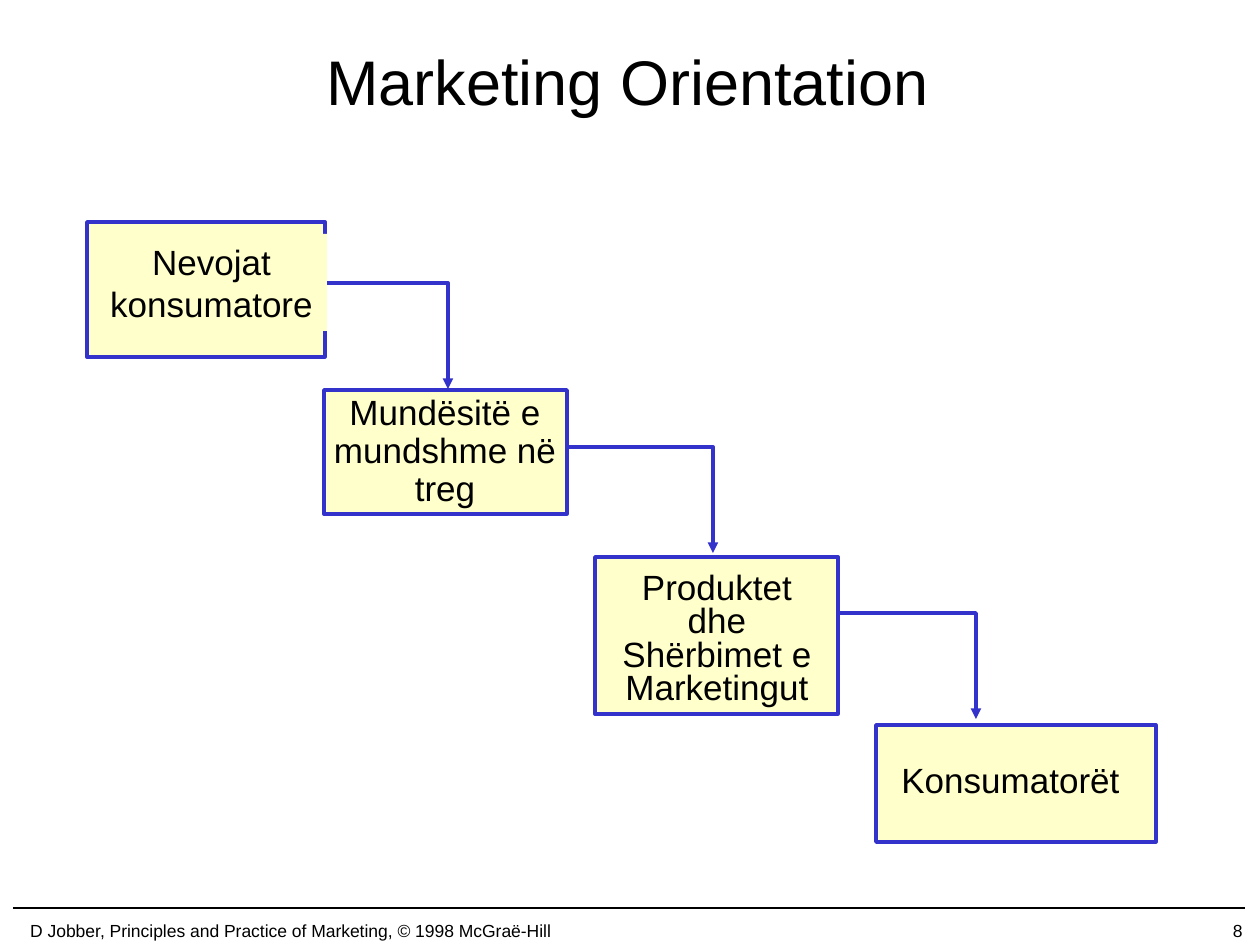
from typing import NamedTuple, Optional

from lxml.etree import SubElement
from pptx import Presentation
from pptx.dml.color import RGBColor
from pptx.enum.shapes import MSO_CONNECTOR as Connector, MSO_SHAPE as Preset
from pptx.enum.text import MSO_ANCHOR as Anchor, PP_ALIGN as Align
from pptx.oxml.ns import qn
from pptx.util import Emu, Pt

EMU_PER_PX = 914400 / 126
FONT = "Arial"
COLORS = {"text": "000000", "border": "3333CC", "fill": "FFFFCC"}
ARROW_WIDTH, ARROW_HEIGHT = 151, 106


class Area(NamedTuple):
    left: int
    top: int
    width: int
    height: int


class Step(NamedTuple):
    text: str
    frame: Area
    label: Area
    line_spacing: Optional[float] = None
    filled: bool = False


class Caption(NamedTuple):
    text: str
    area: Area
    size: int
    align: Align
    wrap: bool = False


STEPS = [
    Step("Nevojat konsumatore", Area(87, 222, 238, 135), Area(96, 234, 231, 97), filled=True),
    Step("Mundësitë e mundshme në treg", Area(324, 390, 243, 124), Area(315, 389, 260, 127), 0.9),
    Step("Produktet dhe Shërbimet e Marketingut", Area(595, 557, 243, 157), Area(604, 567, 226, 149), 0.8),
    Step("Konsumatorët", Area(876, 725, 280, 117), Area(885, 752, 251, 54), filled=True),
]
ARROW_STARTS = [(297, 283), (562, 447), (825, 613)]
CAPTIONS = [
    Caption("Marketing Orientation", Area(92, 1, 1071, 158), 36, Align.CENTER, True),
    Caption("D Jobber, Principles and Practice of Marketing, © 1998 McGraë-Hill",
            Area(0, 914, 581, 32), 10, Align.CENTER),
    Caption("8", Area(993, 914, 262, 32), 10, Align.RIGHT),
]


def px(length: int) -> Emu:
    return Emu(round(length * EMU_PER_PX))


def emu_area(area: Area) -> list[Emu]:
    return [px(length) for length in area]


def color(name: str) -> RGBColor:
    return RGBColor.from_string(COLORS[name])


def set_border(shape) -> None:
    shape.line.color.rgb = color("border")
    shape.line.width = Pt(2)


def add_text(page, text: str, area: Area, size: int, align: Align,
             anchor: Anchor = Anchor.TOP, wrap: bool = True,
             line_spacing: Optional[float] = None):
    box = page.shapes.add_textbox(*emu_area(area))
    frame = box.text_frame
    frame.word_wrap = wrap
    frame.vertical_anchor = anchor
    para = frame.paragraphs[0]
    para.alignment = align
    if line_spacing:
        para.line_spacing = line_spacing
    span = para.add_run()
    span.text = text
    span.font.name = FONT
    span.font.size = Pt(size)
    span.font.color.rgb = color("text")
    return box


def add_arrow(page, left: int, top: int) -> None:
    """Draw an elbow going right, then down to an arrowhead."""
    right, bottom = left + ARROW_WIDTH, top + ARROW_HEIGHT
    builder = page.shapes.build_freeform(left, top, scale=EMU_PER_PX)
    builder.add_line_segments([(right, top), (right, bottom)], close=False)
    arrow = builder.convert_to_shape()
    arrow.shadow.inherit = False
    arrow.fill.background()
    set_border(arrow)
    SubElement(arrow.line._get_or_add_ln(), qn("a:tailEnd"), type="triangle")


def add_step(page, step: Step) -> None:
    frame = page.shapes.add_shape(Preset.RECTANGLE, *emu_area(step.frame))
    frame.shadow.inherit = False
    frame.fill.solid()
    frame.fill.fore_color.rgb = color("fill")
    set_border(frame)
    label = add_text(page, step.text, step.label, 20, Align.CENTER,
                     line_spacing=step.line_spacing)
    if step.filled:
        label.fill.solid()
        label.fill.fore_color.rgb = color("fill")


def add_footer_rule(page) -> None:
    rule = page.shapes.add_connector(Connector.STRAIGHT, px(13), px(908), px(1245), px(908))
    rule.line.color.rgb = color("text")
    rule.line.width = Pt(1)
    SubElement(rule._element.spPr, qn("a:effectLst"))


def main() -> None:
    deck = Presentation()
    deck.slide_width, deck.slide_height = px(1260), px(945)
    page = deck.slides.add_slide(deck.slide_layouts[6])
    add_footer_rule(page)
    for caption in CAPTIONS:
        add_text(page, caption.text, caption.area, caption.size, caption.align,
                 Anchor.MIDDLE, caption.wrap)
    for start in ARROW_STARTS:
        add_arrow(page, *start)
    for step in STEPS:
        add_step(page, step)
    deck.save("out.pptx")


if __name__ == "__main__":
    main()
